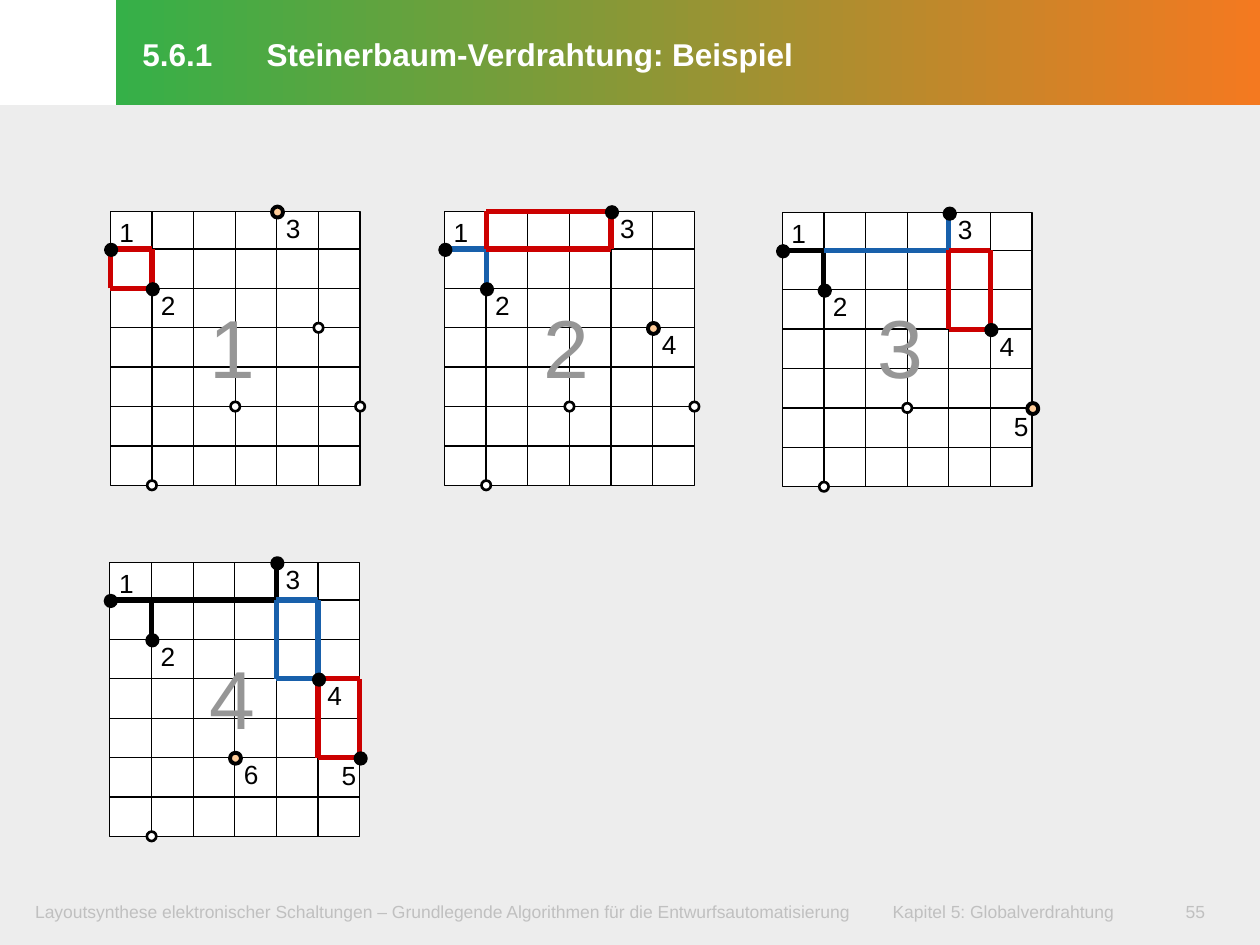
from lxml import etree
from pptx import Presentation
from pptx.dml.color import RGBColor
from pptx.enum.shapes import MSO_CONNECTOR, MSO_SHAPE
from pptx.enum.text import MSO_ANCHOR, MSO_AUTO_SIZE, PP_ALIGN
from pptx.oxml.ns import qn
from pptx.util import Pt

RECTANGLE, OVAL, STRAIGHT = MSO_SHAPE.RECTANGLE, MSO_SHAPE.OVAL, MSO_CONNECTOR.STRAIGHT
LEFT, TOP, MIDDLE = PP_ALIGN.LEFT, MSO_ANCHOR.TOP, MSO_ANCHOR.MIDDLE
NO_FIT = MSO_AUTO_SIZE.NONE

TITLE = "5.6.1\tSteinerbaum-Verdrahtung: Beispiel"
FOOTER = ("Layoutsynthese elektronischer Schaltungen – Grundlegende Algorithmen "
          "für die Entwurfsautomatisierung\tKapitel 5: Globalverdrahtung")
PAGE_NUMBER = "55"

COLOURS = {
    "black": "000000", "white": "FFFFFF", "red": "CC0000", "blue": "1860AB",
    "peach": "FFCC99", "grey": "969696", "pale": "C0C0C0", "backdrop": "EDEDED",
    "green": "35B048", "orange": "F47920",
}

# Pins in connection order, as (column, row) of the grid
PINS = [(0, 1), (1, 2), (4, 0), (5, 3), (6, 5), (3, 5), (1, 7)]

# Each step: grid origin, place of its large number, wires and open route boxes
STEPS = [
    {"origin": (63, 120.8), "number": (111.6, 165.6),
     "wires": [],
     "boxes": [("red", (0, 1), (1, 2))]},
    {"origin": (254, 120.8), "number": (302.4, 165.6),
     "wires": [("blue", (0, 1), (1, 1)), ("blue", (1, 1), (1, 2))],
     "boxes": [("red", (1, 0), (4, 1))]},
    {"origin": (447, 121.6), "number": (493.2, 165.6),
     "wires": [("black", (0, 1), (1, 1)), ("black", (1, 1), (1, 2)),
               ("blue", (1, 1), (4, 1)), ("blue", (4, 0), (4, 1))],
     "boxes": [("red", (4, 1), (5, 3))]},
    {"origin": (62.8, 321.4), "number": (111.6, 366.5),
     "wires": [("black", (0, 1), (4, 1)), ("black", (1, 1), (1, 2)),
               ("black", (4, 0), (4, 1))],
     "boxes": [("blue", (4, 1), (5, 3)), ("red", (5, 3), (6, 5))]},
]

COLUMNS, ROWS = 6, 7
COLUMN_WIDTH, FIRST_ROW, ROW_HEIGHT = 23.8, 21.5, 22.5
LABEL_SIZE = 26
LABEL_SHIFT = {1: (-2.8, -22.4), 5: (-18.4, -2.4)}
USUAL_SHIFT = (-2.8, -3)

# Pin kinds: diameter, fill, outline width, shift from the grid point
PIN_STYLES = {
    "joined": (6.6, "black", 1.5, 0.5),
    "next": (6.3, "peach", 2.25, 0.4),
    "open": (5.4, "white", 1.5, 0),
}

# Text kinds: font values, colour, (horizontal, vertical) margins
TEXT_STYLES = {
    "label": ({"size": Pt(15), "name": "Arial"}, "black", (8, 3.6)),
    "number": ({"size": Pt(47), "name": "Arial"}, "grey", (8, 3.6)),
    "footer": ({"size": Pt(10), "name": "Arial"}, "pale", (8.6, 4.3)),
    "title": ({"size": Pt(18), "name": "Arial", "bold": True}, "white", (15, 4.3)),
}


def rgb(name):
    return RGBColor.from_string(COLOURS[name])


def write(shape, text, style, tab=None, anchor=TOP):
    font_values, colour, (side, edge) = TEXT_STYLES[style]
    frame = shape.text_frame
    frame_values = {
        "word_wrap": True, "auto_size": NO_FIT, "vertical_anchor": anchor,
        "margin_left": Pt(side), "margin_right": Pt(side),
        "margin_top": Pt(edge), "margin_bottom": Pt(edge),
    }
    for key, value in frame_values.items():
        setattr(frame, key, value)
    para = frame.paragraphs[0]
    if tab:
        stops = etree.SubElement(para._p.get_or_add_pPr(), qn("a:tabLst"))
        etree.SubElement(stops, qn("a:tab"), pos=str(Pt(tab)), algn="l")
    para.alignment = LEFT
    span = para.add_run()
    span.text = text
    for key, value in font_values.items():
        setattr(span.font, key, value)
    span.font.color.rgb = rgb(colour)
    return para


def add_text(page, text, style, left, top, width, height, tab=None):
    box = page.shapes.add_textbox(Pt(left), Pt(top), Pt(width), Pt(height))
    write(box, text, style, tab)


def add_filled(page, kind, left, top, width, height, fill, line_width=0):
    shape = page.shapes.add_shape(kind, Pt(left), Pt(top), Pt(width), Pt(height))
    shape.shadow.inherit = False
    shape.fill.solid()
    shape.fill.fore_color.rgb = rgb(fill)
    if line_width:
        shape.line.color.rgb = rgb("black")
        shape.line.width = Pt(line_width)
    else:
        shape.line.fill.background()
    return shape


def grid_point(origin, cell):
    """Return the slide position of a grid crossing; the top row is lower than the rest."""
    column, row = cell
    down = FIRST_ROW + (row - 1) * ROW_HEIGHT if row else 0
    return origin[0] + column * COLUMN_WIDTH, origin[1] + down


def add_line(page, origin, start, end, colour, width):
    ends = grid_point(origin, start) + grid_point(origin, end)
    line = page.shapes.add_connector(STRAIGHT, *(Pt(value) for value in ends))
    line.line.color.rgb = rgb(colour)
    line.line.width = Pt(width)
    etree.SubElement(line._element.spPr, qn("a:effectLst"))
    return line


def add_grid(page, origin):
    right, bottom = grid_point(origin, (COLUMNS, ROWS))
    frame = add_filled(page, RECTANGLE, *origin, right - origin[0],
                       bottom - origin[1], "white", 0.75)
    for column in range(1, COLUMNS):
        line = add_line(page, origin, (column, 0), (column, ROWS), "black", 0.75)
        if column * 2 == COLUMNS:
            line.begin_connect(frame, 0)
            line.end_connect(frame, 2)
    for row in range(1, ROWS):
        add_line(page, origin, (0, row), (COLUMNS, row), "black", 0.75)


def box_sides(colour, first, last):
    (left, top), (right, bottom) = first, last
    corners = [(left, top), (right, top), (right, bottom), (left, bottom)]
    return [(colour, corners[i], corners[(i + 1) % 4]) for i in range(4)]


def add_pin(page, origin, cell, kind):
    size, fill, line_width, shift = PIN_STYLES[kind]
    x, y = grid_point(origin, cell)
    add_filled(page, OVAL, x + shift - size / 2, y + shift - size / 2,
               size, size, fill, line_width)


def add_step(page, step_number, step):
    """Draw one step: step n has joined n + 1 pins and takes the next one."""
    origin = step["origin"]
    next_pin = step_number + 2
    add_grid(page, origin)
    wires = step["wires"] + [side for box in step["boxes"] for side in box_sides(*box)]
    for colour, start, end in wires:
        add_line(page, origin, start, end, colour, 3)
    for pin, cell in enumerate(PINS, 1):
        kind = "joined" if pin < next_pin else "next" if pin == next_pin else "open"
        add_pin(page, origin, cell, kind)
        if pin <= next_pin:
            x, y = grid_point(origin, cell)
            across, down = LABEL_SHIFT.get(pin, USUAL_SHIFT)
            add_text(page, str(pin), "label", x + across, y + down,
                     LABEL_SIZE, LABEL_SIZE)
    add_text(page, str(step_number), "number", *step["number"], 76, 76)


def add_title(page):
    title = page.shapes.title
    places = {"left": 66.3, "top": 0, "width": 653.7, "height": 60}
    for key, value in places.items():
        setattr(title, key, Pt(value))
    title.fill.gradient()
    title.fill.gradient_angle = 0
    for stop, colour, position in zip(title.fill.gradient_stops, ("green", "orange"), (0, 1)):
        stop.color.rgb = rgb(colour)
        stop.position = position
    para = write(title, TITLE, "title", tab=71, anchor=MIDDLE)
    para.line_spacing = Pt(23.5)


def main():
    deck = Presentation()
    deck.slide_width, deck.slide_height = Pt(720), Pt(540)
    page = deck.slides.add_slide(deck.slide_layouts[5])
    add_filled(page, RECTANGLE, 0, 60, 720, 480, "backdrop")
    add_title(page)
    add_text(page, FOOTER, "footer", 11.5, 510.5, 681, 23, tab=490)
    add_text(page, PAGE_NUMBER, "footer", 668.9, 510.5, 42.5, 23)
    for step_number, step in enumerate(STEPS, 1):
        add_step(page, step_number, step)
    deck.save("out.pptx")


if __name__ == "__main__":
    main()
